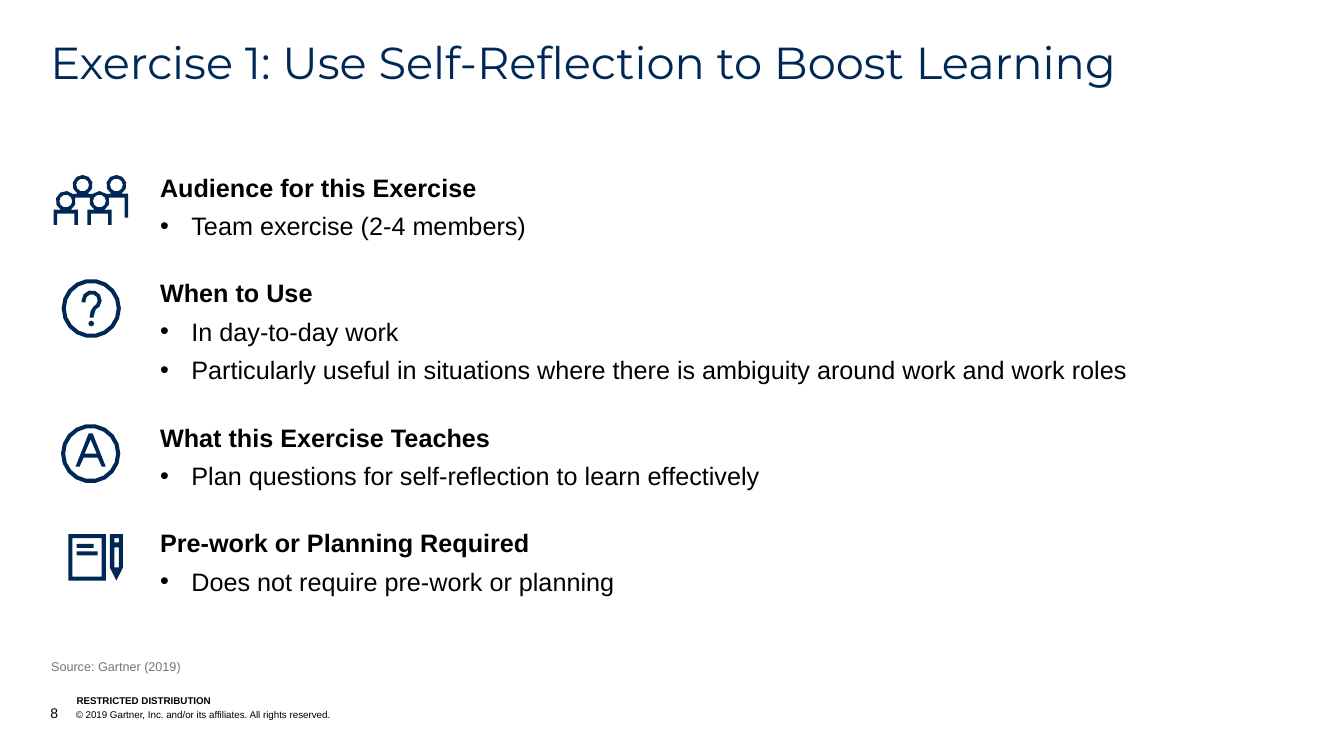
from dataclasses import dataclass
from math import cos, radians, sin

from lxml.etree import SubElement
from pptx import Presentation
from pptx.dml.color import RGBColor
from pptx.enum.text import MSO_ANCHOR, MSO_AUTO_SIZE, PP_ALIGN
from pptx.oxml.ns import qn
from pptx.util import Cm, Pt

Point = tuple[float, float]
Contour = list[Point]


@dataclass(frozen=True)
class Theme:
    navy: RGBColor = RGBColor(0x00, 0x28, 0x56)
    black: RGBColor = RGBColor(0x00, 0x00, 0x00)
    grey: RGBColor = RGBColor(0x6F, 0x78, 0x78)
    title_font: str = "Montserrat"
    body_font: str = "Arial"
    title_size: int = 32
    body_size: int = 18
    source_size: int = 9
    page_size: int = 10
    legal_size: int = 7


@dataclass(frozen=True)
class Section:
    heading: str
    bullets: list[str]
    width: float
    icon: list[Contour]


@dataclass(frozen=True)
class Note:
    left: float
    top: float
    width: float
    height: float
    runs: list[tuple[str, int]]
    color: RGBColor
    bold: bool = False
    footer: bool = True


T = Theme()
ICON_UNIT = Cm(0.0254)  # icon points are given in this unit
LINE_HEIGHT, SECTION_GAP = 1.0, 0.65


# Outline helpers
def arc(cx: float, cy: float, r: float, start: int, end: int, step: int = 36) -> Contour:
    steps = max(round(abs(end - start) / step), 1)
    angles = [radians(start + (end - start) * i / steps) for i in range(steps + 1)]
    return [(cx + r * cos(a), cy + r * sin(a)) for a in angles]


def circle(cx: float, cy: float, r: float, step: int = 36) -> Contour:
    return arc(cx, cy, r, 0, 360, step)[:-1]


def rect(x0: float, y0: float, x1: float, y1: float) -> Contour:
    return [(x0, y0), (x1, y0), (x1, y1), (x0, y1)]


def ring(cx: float, cy: float) -> list[Contour]:
    return [circle(cx, cy, r, 20) for r in (29.4, 25.3)]


def shoulders(cx: float) -> Contour:
    return [(cx - 12, 208), (cx - 12, 223), (cx - 8.5, 223), (cx - 8.5, 212),
            (cx + 8.5, 212), (cx + 8.5, 223), (cx + 12, 223), (cx + 12, 208)]


# Icons
BACK_Y, FRONT_Y, HEAD, FACE = 183.5, 199.5, 10, 6.4
BACK_X, FRONT_X = (82, 115.5), (65.3, 98.7)

team = [
    arc(BACK_X[1], BACK_Y, HEAD, 60, -240)
    + arc(FRONT_X[1], FRONT_Y, HEAD, -45, -135)
    + arc(BACK_X[0], BACK_Y, HEAD, 60, -240)
    + arc(FRONT_X[0], FRONT_Y, HEAD, -45, -240)
    + shoulders(FRONT_X[0])
    + arc(FRONT_X[0], FRONT_Y, HEAD, 60, -20)
    + arc(FRONT_X[1], FRONT_Y, HEAD, -160, -240)
    + shoulders(FRONT_X[1])
    + arc(FRONT_X[1], FRONT_Y, HEAD, 60, -20)
    + [(123.7, 196), (123.7, 216), (127.3, 216), (127.3, 192)],
    *[circle(x, BACK_Y, FACE) for x in BACK_X],
    *[circle(x, FRONT_Y, FACE) for x in FRONT_X],
]
question = [
    *ring(90.6, 306),
    [(81, 300)] + arc(91, 298, 10, -180, 40)
    + [(95, 307), (93, 314), (93, 315), (89, 315), (90, 308.5), (93, 304)]
    + arc(91, 298, 6, 40, -180) + [(85, 300)],
    circle(90.6, 321, 2.8, 45),
]
letter_a = [
    *ring(90, 450),
    [(88, 430), (75, 463), (79, 463), (83, 454), (97, 454), (101, 463), (105, 463), (92, 430)],
    [(84, 450), (90, 436), (96, 450)],
]
notebook = [
    rect(76, 539.5, 93, 543.5), rect(76, 547, 97, 551),
    rect(68, 530, 105, 576), rect(72, 534, 101, 572),
    [(122, 530), (122, 563), (115.5, 576), (109, 563), (109, 530)],
    rect(113.5, 534, 118, 538), rect(113.5, 543, 118, 563),
]

SECTIONS = [
    Section("Audience for this Exercise", ["Team exercise (2-4 members)"], 24.1, team),
    Section("When to Use",
            ["In day-to-day work",
             "Particularly useful in situations where there is ambiguity around work and work roles"],
            27.79, question),
    Section("What this Exercise Teaches",
            ["Plan questions for self-reflection to learn effectively"], 25.78, letter_a),
    Section("Pre-work or Planning Required", ["Does not require pre-work or planning"], 24.1, notebook),
]
NOTES = [
    Note(1.27, 17.75, 20.29, 0.43,
         [("8", T.page_size),
          ("\t© 2019 Gartner, Inc. and/or its affiliates. All rights reserved.", T.legal_size)],
         T.black),
    Note(1.93, 17.5, 6.43, 0.3, [("RESTRICTED DISTRIBUTION", T.legal_size)], T.black, bold=True),
    Note(1.04, 16.48, 25.78, 0.64, [("Source: Gartner (2019)", T.source_size)], T.grey, footer=False),
]


# Drawing functions
def place(sp, left: float, top: float, width: float, height: float) -> None:
    sp.left, sp.top, sp.width, sp.height = Cm(left), Cm(top), Cm(width), Cm(height)


def no_margins(tf) -> None:
    tf.margin_left = tf.margin_right = tf.margin_top = tf.margin_bottom = 0


def add_run(p, text: str, size: int, color: RGBColor, bold: bool = False, font: str = T.body_font) -> None:
    r = p.add_run()
    r.text = text
    r.font.name, r.font.size, r.font.bold = font, Pt(size), bold
    r.font.color.rgb = color


def hang(p, indent: float) -> None:
    pPr = p._p.get_or_add_pPr()
    pPr.set("marL", str(Cm(indent)))
    pPr.set("indent", str(-Cm(indent)))


def set_bullet(p, char: str = "") -> None:
    hang(p, 0.79 if char else 0)
    pPr = p._p.get_or_add_pPr()
    if char:
        SubElement(pPr, qn("a:buFont")).set("typeface", T.body_font)
        SubElement(pPr, qn("a:buChar")).set("char", char)
    else:
        SubElement(pPr, qn("a:buNone"))


def draw_icon(s, contours: list[Contour]) -> None:
    scaled = [[(x * ICON_UNIT, y * ICON_UNIT) for x, y in c] for c in contours]
    fb = s.shapes.build_freeform(*scaled[0][0])
    for i, c in enumerate(scaled):
        if i:
            fb.move_to(*c[0])
        fb.add_line_segments(c[1:], close=True)
    sp = fb.convert_to_shape()
    sp.shadow.inherit = False
    sp.fill.solid()
    sp.fill.fore_color.rgb = T.navy
    sp.line.fill.background()


def draw_section(s, sp, section: Section, top: float) -> float:
    height = LINE_HEIGHT * (1 + len(section.bullets))
    place(sp, 3.78, top, section.width, height)
    tf = sp.text_frame
    tf.word_wrap, tf.auto_size = True, MSO_AUTO_SIZE.SHAPE_TO_FIT_TEXT
    tf.vertical_anchor = MSO_ANCHOR.TOP
    for i, text in enumerate([section.heading, *section.bullets]):
        p = tf.add_paragraph() if i else tf.paragraphs[0]
        set_bullet(p, "•" if i else "")
        p.space_before, p.space_after = Pt(0), Pt(6)
        add_run(p, text, T.body_size, T.black, bold=i == 0)
    draw_icon(s, section.icon)
    return top + height + SECTION_GAP


def draw_note(s, note: Note) -> None:
    sp = s.shapes.add_textbox(Cm(note.left), Cm(note.top), Cm(note.width), Cm(note.height))
    tf = sp.text_frame
    tf.word_wrap, tf.auto_size = True, MSO_AUTO_SIZE.SHAPE_TO_FIT_TEXT
    p = tf.paragraphs[0]
    if note.footer:
        no_margins(tf)
        tf.vertical_anchor = MSO_ANCHOR.BOTTOM
        hang(p, 0.64)
        tabs = SubElement(p._p.get_or_add_pPr(), qn("a:tabLst"))
        SubElement(tabs, qn("a:tab"), pos=str(Cm(0.64)), algn="l")
    for text, size in note.runs:
        add_run(p, text, size, note.color, note.bold)


def main() -> None:
    prs = Presentation()
    prs.slide_width, prs.slide_height = Cm(33.87), Cm(19.05)
    s = prs.slides.add_slide(prs.slide_layouts[4])  # title and four body placeholders

    # Title
    title, *bodies = s.placeholders
    place(title, 1.27, 1.02, 31.32, 1.22)
    tf = title.text_frame
    no_margins(tf)
    tf.auto_size, tf.vertical_anchor = MSO_AUTO_SIZE.NONE, MSO_ANCHOR.TOP
    p = tf.paragraphs[0]
    p.alignment, p.line_spacing, p.space_after = PP_ALIGN.LEFT, 0.9, Pt(12)
    add_run(p, "Exercise 1: Use Self-Reflection to Boost Learning", T.title_size, T.navy, font=T.title_font)

    # Sections with icons
    top = 4.21
    for sp, section in zip(bodies, SECTIONS):
        top = draw_section(s, sp, section, top)

    # Source and footer
    for note in NOTES:
        draw_note(s, note)
    prs.save("out.pptx")


if __name__ == "__main__":
    main()
